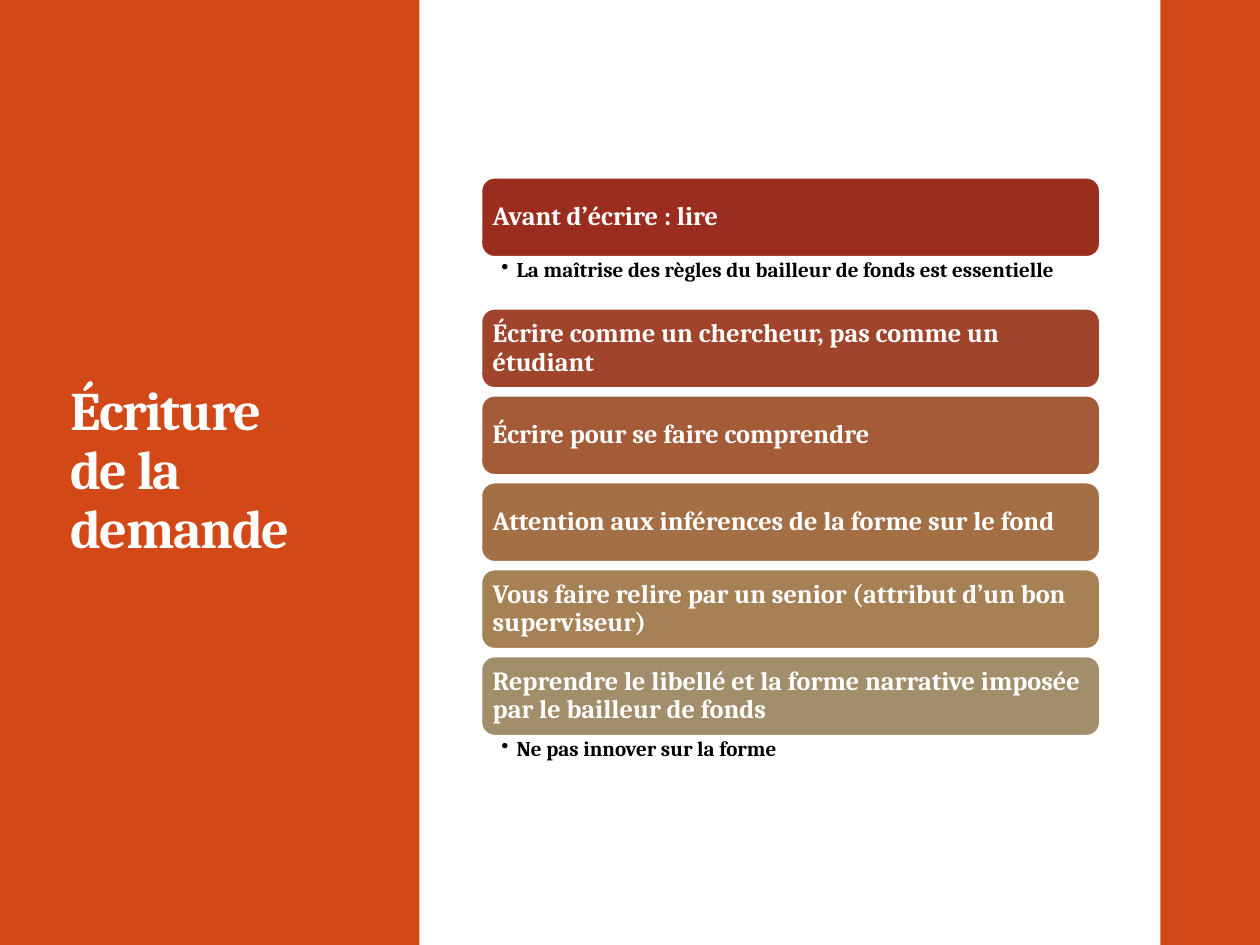
from lxml import etree
from pptx import Presentation
from pptx import util as u
from pptx.dml.color import RGBColor
from pptx.enum import shapes, text
from pptx.oxml import ns

FONT = "Cambria"
COLORS = {"panel": "D34817", "light": "FFFFFF", "note": "000000"}
BOX_LEFT, BOX_WIDTH, BOX_HEIGHT = 3.82, 4.91, 0.63
FIRST_TOP, GAP = 1.41, 0.06

ADVICE = [
    ("Avant d’écrire : lire", "9B2D1F",
     "La maîtrise des règles du bailleur de fonds est essentielle", 0.41),
    ("Écrire comme un chercheur, pas comme un étudiant", "A0442B", None, GAP),
    ("Écrire pour se faire comprendre", "A35B38", None, GAP),
    ("Attention aux inférences de la forme sur le fond", "A56F46", None, GAP),
    ("Vous faire relire par un senior (attribut d’un bon superviseur)", "A68156", None, GAP),
    ("Reprendre le libellé et la forme narrative imposée par le bailleur de fonds", "A28E6A",
     "Ne pas innover sur la forme", 0.27),
]


def rgb(value):
    return RGBColor.from_string(value)


def write(shape, words, size, color, insets, anchor):
    frame = shape.text_frame
    frame.word_wrap = True
    frame.vertical_anchor = anchor
    frame.margin_left, frame.margin_top, frame.margin_right, frame.margin_bottom = map(u.Inches, insets)
    paragraph = frame.paragraphs[0]
    paragraph.alignment = text.PP_ALIGN.LEFT
    paragraph.line_spacing = 0.9
    run = paragraph.add_run()
    run.text = words
    run.font.name = FONT
    run.font.size = u.Pt(size)
    run.font.bold = True
    run.font.color.rgb = rgb(color)
    return paragraph


def add_block(slide, kind, box, fill):
    block = slide.shapes.add_shape(kind, *map(u.Inches, box))
    block.shadow.inherit = False
    block.fill.solid()
    block.fill.fore_color.rgb = rgb(fill)
    block.line.fill.background()
    return block


def add_title(slide, words):
    title = slide.shapes.add_textbox(*map(u.Inches, (0.46, 0.91, 2.23, 5.67)))
    paragraph = write(title, words, 31, COLORS["light"],
                      (0.1, 0.05, 0.1, 0.05), text.MSO_ANCHOR.MIDDLE)
    paragraph.runs[0].font._element.set("spc", "-70")


def add_advice(slide, top, words, fill):
    advice = add_block(slide, shapes.MSO_SHAPE.ROUNDED_RECTANGLE,
                       (BOX_LEFT, top, BOX_WIDTH, BOX_HEIGHT), fill)
    advice.line.color.rgb = rgb(COLORS["light"])
    advice.line.width = u.Pt(1.1)
    write(advice, words, 15, COLORS["light"], (0.06,) * 4, text.MSO_ANCHOR.MIDDLE)


def add_note(slide, top, height, words):
    note = slide.shapes.add_textbox(*map(u.Inches, (BOX_LEFT, top, BOX_WIDTH, height)))
    paragraph = write(note, words, 12, COLORS["note"],
                      (0.16, 0.02, 0.12, 0.02), text.MSO_ANCHOR.TOP)
    paragraph.level = 1
    properties = paragraph._p.get_or_add_pPr()
    properties.set("marL", str(u.Inches(0.12)))
    properties.set("indent", str(-u.Inches(0.12)))
    etree.SubElement(properties, ns.qn("a:buChar")).set("char", "•")


def main():
    deck = Presentation()
    deck.slide_width, deck.slide_height = u.Inches(10), u.Inches(7.5)
    slide = deck.slides.add_slide(deck.slide_layouts[6])
    for left, width in ((0, 3.33), (9.21, 0.79)):
        add_block(slide, shapes.MSO_SHAPE.RECTANGLE, (left, 0, width, 7.5), COLORS["panel"])
    add_title(slide, "Écriture de la demande")
    top = FIRST_TOP
    for words, fill, note, space_below in ADVICE:
        add_advice(slide, top, words, fill)
        top += BOX_HEIGHT
        if note:
            add_note(slide, top, space_below, note)
        top += space_below
    deck.save("out.pptx")


if __name__ == "__main__":
    main()
